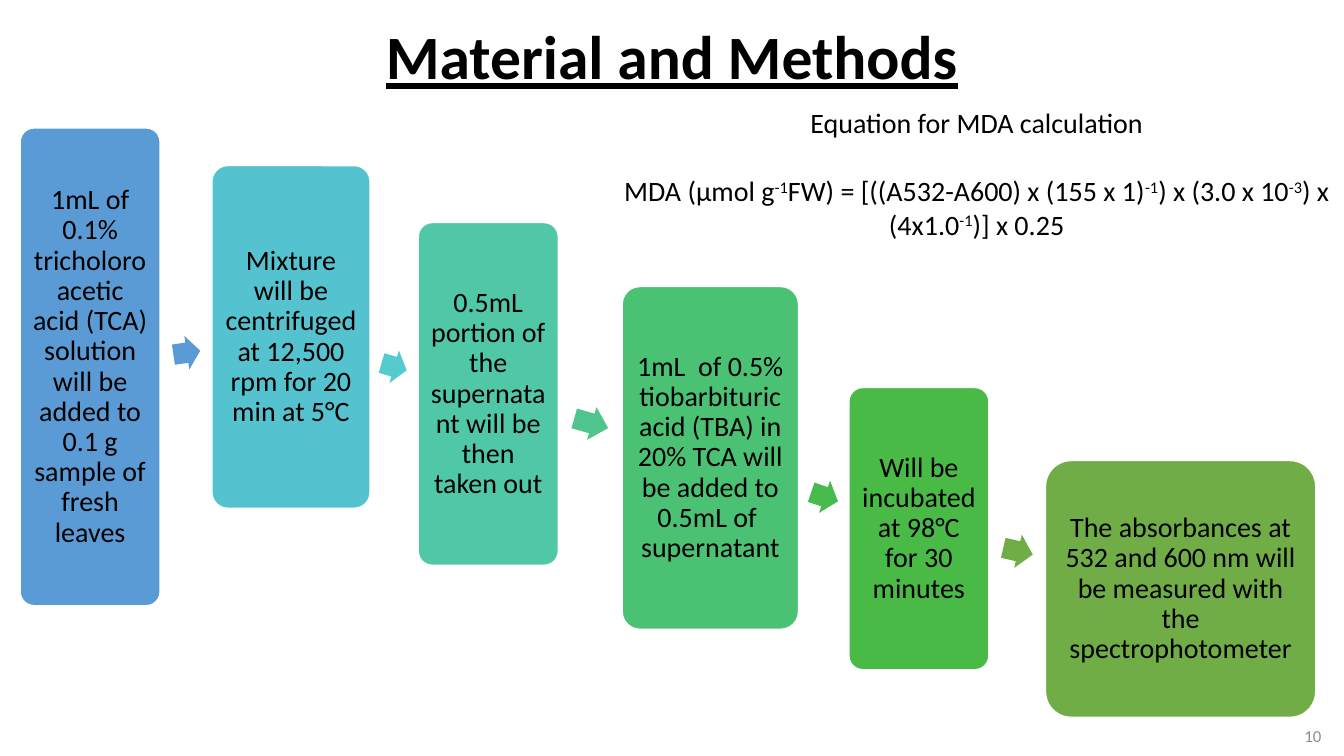
from pptx import Presentation
from pptx.dml.color import RGBColor
from pptx.enum.shapes import MSO_SHAPE
from pptx.enum.text import MSO_ANCHOR, PP_ALIGN
from pptx.util import Pt

BLACK = RGBColor(0x00, 0x00, 0x00)
WHITE = RGBColor(0xFF, 0xFF, 0xFF)
GREY = RGBColor(0x8C, 0x8C, 0x8C)
BLUE = RGBColor(0x5B, 0x9B, 0xD5)
CYAN = RGBColor(0x55, 0xC3, 0xCF)
AQUA = RGBColor(0x54, 0xCC, 0xCD)
TEAL = RGBColor(0x50, 0xC8, 0xA7)
JADE = RGBColor(0x4D, 0xC5, 0x8D)
MINT = RGBColor(0x4B, 0xC1, 0x74)
LEAF = RGBColor(0x48, 0xBB, 0x4F)
GREEN = RGBColor(0x4A, 0xBA, 0x46)
OLIVE = RGBColor(0x70, 0xAD, 0x47)

BODY = {"name": "Calibri", "size": Pt(20)}
TITLE = {"name": "Calibri", "size": Pt(44), "bold": True, "underline": True}
NUMBER = {"name": "Calibri", "size": Pt(12)}
STEP_FRAME = {"word_wrap": True, "vertical_anchor": MSO_ANCHOR.MIDDLE,
              "margin_left": Pt(6), "margin_right": Pt(6),
              "margin_top": Pt(6), "margin_bottom": Pt(6)}
MIDDLE_FRAME = {"word_wrap": True, "vertical_anchor": MSO_ANCHOR.MIDDLE}
TOP_FRAME = {"word_wrap": True, "vertical_anchor": MSO_ANCHOR.TOP}
CENTRED = {"alignment": PP_ALIGN.CENTER}
TIGHT = {"alignment": PP_ALIGN.CENTER, "line_spacing": 0.9}
AFTER_GAP = {"alignment": PP_ALIGN.CENTER, "space_before": Pt(24.4)}

STEPS = [
    ((14.4, 91.4, 100, 341.3), BLUE,
     "1mL of 0.1% tricholoroacetic acid (TCA) solution will be added to "
     "0.1 g sample of fresh leaves"),
    ((151.4, 118.3, 113, 244.8), CYAN,
     "Mixture will be centrifuged at 12,500 rpm for 20 min at 5°C"),
    ((298.8, 159, 100, 244.8), TEAL,
     "0.5mL portion of the supernatant will be then taken out"),
    ((444.4, 204.7, 126, 244.8), MINT,
     "1mL  of 0.5% tiobarbituric acid (TBA) in 20% TCA will be added to "
     "0.5mL of  supernatant"),
    ((606.4, 276.8, 100, 201.6), GREEN,
     "Will be incubated at 98°C for 30 minutes"),
    ((746.8, 329, 193, 183.4), OLIVE,
     "The absorbances at 532 and 600 nm will be measured with the "
     "spectrophotometer"),
]
ARROWS = [
    ((123.8, 239.8, 19.4, 24.3), -8.4, BLUE),
    ((272.2, 249.8, 18.7, 24.3), 16.1, AQUA),
    ((409.7, 290.2, 25.2, 24.3), 15.9, JADE),
    ((578.9, 342.7, 20.2, 24.3), 18.8, LEAF),
    ((716.4, 381.6, 21.6, 24.3), 12.9, OLIVE),
]
EQUATION = [
    ("MDA (μmol g", "-1"),
    ("FW) = [((A532-A600) x (155 x 1)", "-1"),
    (") x (3.0 x 10", "-3"),
    (") x (4x1.0", "-1"),
    (")] x 0.25", ""),
]


def apply(target, values):
    for name, value in values.items():
        setattr(target, name, value)


def add_span(para, text, font, color=BLACK):
    span = para.add_run()
    span.text = text
    apply(span.font, font)
    span.font.color.rgb = color
    return span


def add_label(page, place, text, font, layout, color=BLACK):
    box = page.shapes.add_textbox(*map(Pt, place))
    apply(box.text_frame, MIDDLE_FRAME)
    para = box.text_frame.paragraphs[0]
    apply(para, layout)
    add_span(para, text, font, color)


def add_block(page, kind, place, fill):
    block = page.shapes.add_shape(kind, *map(Pt, place))
    block.shadow.inherit = False
    block.fill.solid()
    block.fill.fore_color.rgb = fill
    block.line.fill.background()
    return block


def add_step(page, place, fill, text):
    step = add_block(page, MSO_SHAPE.ROUNDED_RECTANGLE, place, fill)
    step.adjustments[0] = 0.1
    step.line.color.rgb = WHITE
    step.line.width = Pt(1)
    apply(step.text_frame, STEP_FRAME)
    para = step.text_frame.paragraphs[0]
    apply(para, TIGHT)
    add_span(para, text, BODY)


def add_arrow(page, place, rotation, fill):
    arrow = add_block(page, MSO_SHAPE.RIGHT_ARROW, place, fill)
    arrow.adjustments[0] = 0.6
    arrow.adjustments[1] = 0.5
    arrow.rotation = rotation


def add_equation(page, place):
    panel = add_block(page, MSO_SHAPE.RECTANGLE, place, WHITE)
    frame = panel.text_frame
    apply(frame, TOP_FRAME)
    heading = frame.paragraphs[0]
    apply(heading, CENTRED)
    add_span(heading, "Equation for MDA calculation", BODY)
    formula = frame.add_paragraph()
    apply(formula, AFTER_GAP)
    for term, exponent in EQUATION:
        add_span(formula, term, BODY)
        if exponent:
            span = add_span(formula, exponent, BODY)
            span._r.get_or_add_rPr().set("baseline", "30000")


def main():
    deck = Presentation()
    deck.slide_width, deck.slide_height = Pt(960), Pt(540)
    page = deck.slides.add_slide(deck.slide_layouts[6])
    add_label(page, (66, -9.4, 828, 104.4), "Material and Methods", TITLE, TIGHT)
    add_label(page, (735, 511.2, 216, 28.8), "10", NUMBER,
              {"alignment": PP_ALIGN.RIGHT}, GREY)
    for step in STEPS:
        add_step(page, *step)
    for arrow in ARROWS:
        add_arrow(page, *arrow)
    add_equation(page, (437, 72, 521.3, 128.2))
    deck.save("out.pptx")


if __name__ == "__main__":
    main()
